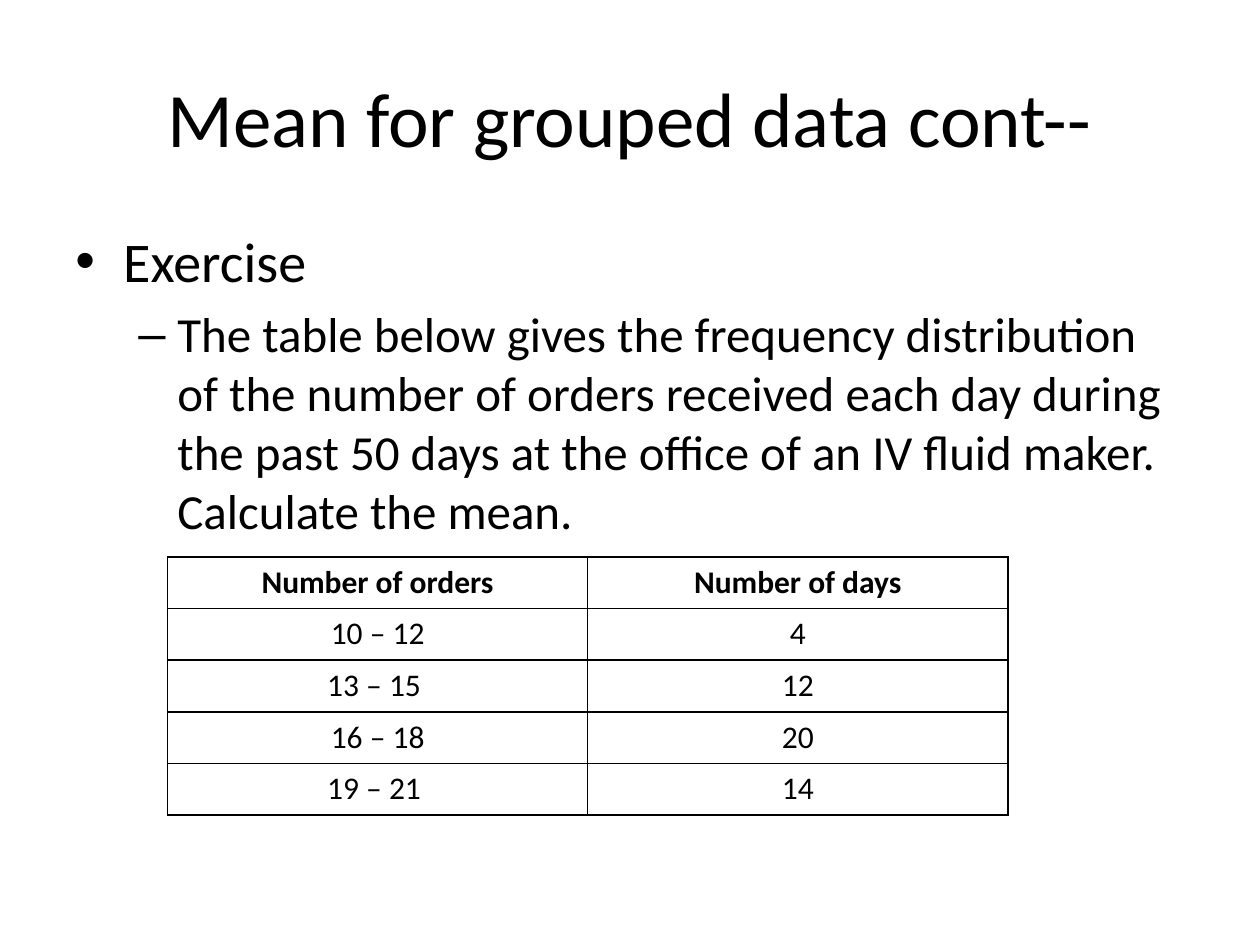
from lxml import etree
from pptx import Presentation
from pptx import util as u
from pptx.dml.color import RGBColor
from pptx.enum import text
from pptx.oxml import ns

# Content
TITLE = "Mean for grouped data cont--"
# text, size, level, bullet, left margin, first-line indent
BULLETS = [
    ("Exercise", 32, 0, "•", 0.38, -0.38),
    ("The table below gives the frequency distribution of the number of orders "
     "received each day during the past 50 days at the office of an IV fluid "
     "maker. Calculate the mean.", 28, 1, "–", 0.81, -0.31),
]
ORDERS = [
    ("Number of orders", "Number of days"),
    ("10 – 12", "4"),
    ("13 – 15 ", "12"),
    ("16 – 18", "20"),
    ("19 – 21 ", "14"),
]

FONT = "Calibri"
BLACK = RGBColor(0x00, 0x00, 0x00)
WHITE = RGBColor(0xFF, 0xFF, 0xFF)
ROW_HEIGHT = 0.41
TABLE_WIDTH = 6.67


def write(para, words, size=18, bold=False, align=text.PP_ALIGN.CENTER):
    para.alignment = align
    span = para.add_run()
    span.text = words
    span.font.name = FONT
    span.font.size = u.Pt(size)
    span.font.bold = bold
    span.font.color.rgb = BLACK


def add_text_box(page, left, top, width, height, anchor):
    box = page.shapes.add_textbox(*map(u.Inches, (left, top, width, height)))
    box.text_frame.word_wrap = True
    box.text_frame.vertical_anchor = anchor
    return box.text_frame


def set_bullet(para, mark, margin, indent):
    props = para._p.get_or_add_pPr()
    props.set("marL", str(u.Inches(margin)))
    props.set("indent", str(u.Inches(indent)))
    etree.SubElement(props, ns.qn("a:buFont"), typeface="Arial")
    etree.SubElement(props, ns.qn("a:buChar"), char=mark)


def set_borders(cell, width=1):
    props = cell._tc.get_or_add_tcPr()
    for place, side in enumerate(("lnL", "lnR", "lnT", "lnB")):
        line = etree.Element(ns.qn("a:" + side), w=str(u.Pt(width)))
        fill = etree.SubElement(line, ns.qn("a:solidFill"))
        etree.SubElement(fill, ns.qn("a:srgbClr"), val=str(BLACK))
        props.insert(place, line)


deck = Presentation()
deck.slide_width, deck.slide_height = u.Inches(10), u.Inches(7.5)
page = deck.slides.add_slide(deck.slide_layouts[6])

# Title
frame = add_text_box(page, 0.5, 0.3, 9, 1.25, text.MSO_ANCHOR.MIDDLE)
write(frame.paragraphs[0], TITLE, size=44)

# Exercise text
frame = add_text_box(page, 0.5, 1.75, 9, 4.95, text.MSO_ANCHOR.TOP)
for index, (words, size, level, mark, margin, indent) in enumerate(BULLETS):
    para = frame.add_paragraph() if index else frame.paragraphs[0]
    para.level = level
    para.space_before = u.Pt(size * 0.2)
    set_bullet(para, mark, margin, indent)
    write(para, words, size=size, align=text.PP_ALIGN.LEFT)

# Frequency table
table = page.shapes.add_table(
    len(ORDERS), len(ORDERS[0]), u.Inches(1.33), u.Inches(4.42),
    u.Inches(TABLE_WIDTH), u.Inches(ROW_HEIGHT * len(ORDERS))).table
table.horz_banding = False
for row_index, row in enumerate(ORDERS):
    for column_index, words in enumerate(row):
        cell = table.cell(row_index, column_index)
        cell.fill.solid()
        cell.fill.fore_color.rgb = WHITE
        set_borders(cell)
        write(cell.text_frame.paragraphs[0], words, bold=row_index == 0)

deck.save("out.pptx")
